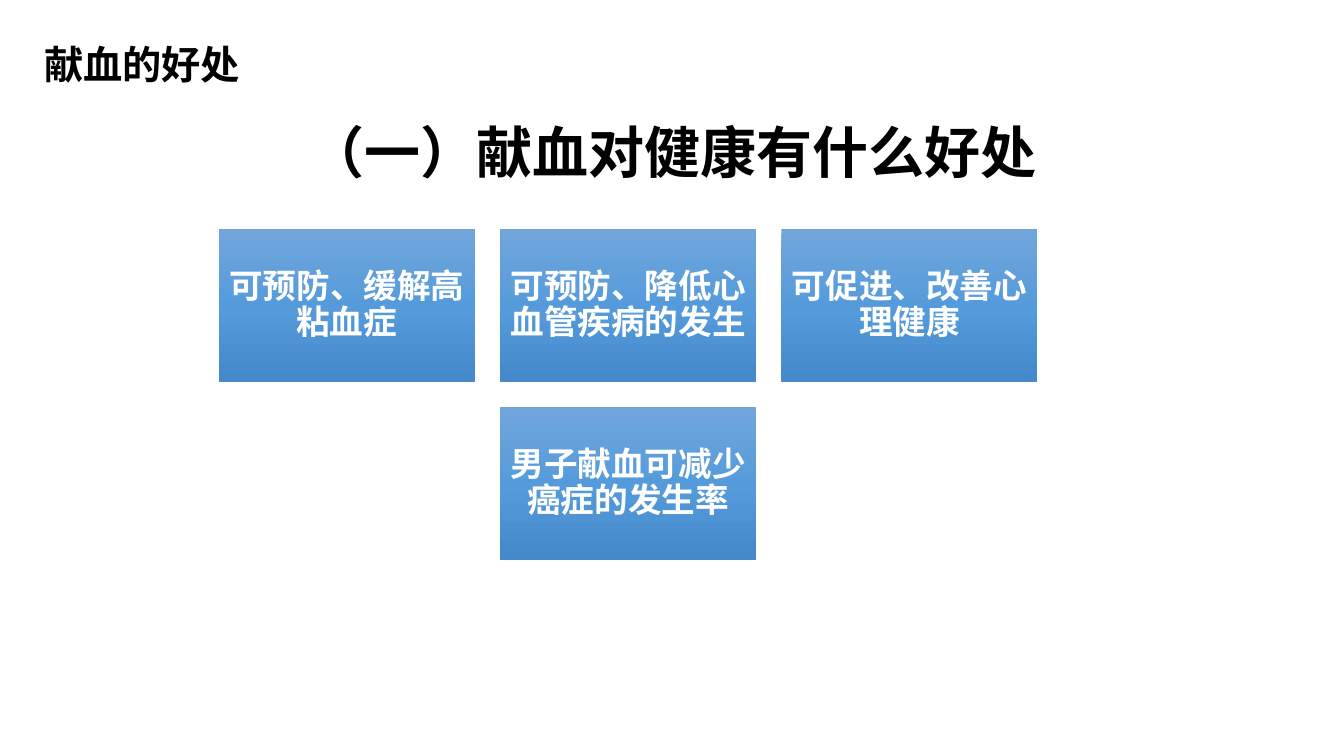
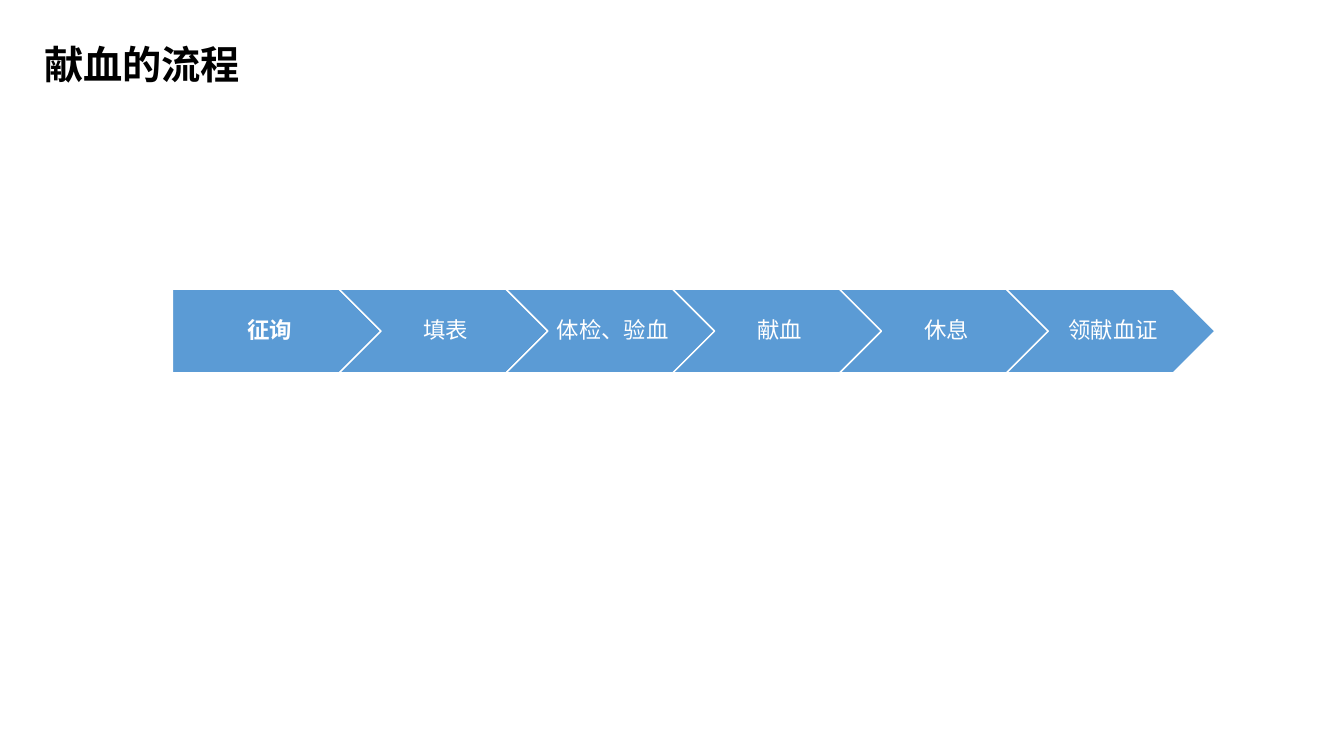
from lxml.etree import SubElement
from pptx import Presentation
from pptx.dml.color import RGBColor
from pptx.enum.shapes import MSO_SHAPE
from pptx.enum.text import MSO_ANCHOR, MSO_AUTO_SIZE, PP_ALIGN
from pptx.oxml.ns import qn
from pptx.util import Inches, Pt

COLOURS = {
    "ink": "000000",
    "white": "FFFFFF",
    "step": "5B9BD5",
    "card_top": "71A6DB",
    "card_middle": "559BDB",
    "card_bottom": "448ACA",
}
LATIN_FONT = "Roboto"
CJK_FONT = "Noto Sans CJK SC"
TITLE_ONLY = 5

TITLE_BOX = (0.34, 0.35, 5.18, 0.57)
HEADING_BOX = (1.98, 1.12, 9.38, 0.77)
CARDS_BOX = (2.17, 2.27, 8.12, 3.29)
STEPS_BOX = (1.71, 2.87, 10.34, 0.83)

HEADING_INSETS = (0.1, 0.05, 0.1, 0.05)
CARD_INSETS = (0.1, 0.1, 0.1, 0.1)
FIRST_STEP_INSETS = (0.09, 0.05, 0.02, 0.05)
STEP_INSETS = (0.07, 0.05, 0.02, 0.05)

TITLE_FONT = {"size": Pt(28), "bold": True, "name": LATIN_FONT}
HEADING_FONT = {"size": Pt(40), "bold": True, "name": CJK_FONT}
CARD_FONT = {"size": Pt(24), "bold": True, "name": LATIN_FONT}
STEP_FONT = {"size": Pt(16), "bold": False, "name": LATIN_FONT}

BENEFIT_ROWS = [
    ["可预防、缓解高粘血症", "可预防、降低心血管疾病的发生", "可促进、改善心理健康"],
    ["男子献血可减少癌症的发生率"],
]
STEPS = ["征询", "填表", "体检、验血", "献血", "休息", "领献血证"]


def colour(name):
    return RGBColor.from_string(COLOURS[name])


def inches(box):
    return [Inches(length) for length in box]


def set_text(shape, text, font, ink, align, insets, anchor=MSO_ANCHOR.TOP):
    frame = shape.text_frame
    frame.text = text
    left, top, right, bottom = inches(insets)
    frame_format = {
        "word_wrap": True,
        "auto_size": MSO_AUTO_SIZE.NONE,
        "vertical_anchor": anchor,
        "margin_left": left,
        "margin_top": top,
        "margin_right": right,
        "margin_bottom": bottom,
    }
    for key, value in frame_format.items():
        setattr(frame, key, value)
    paragraph = frame.paragraphs[0]
    paragraph.alignment = align
    run = paragraph.runs[0]
    for key, value in font.items():
        setattr(run.font, key, value)
    run.font.color.rgb = colour(ink)
    east_asian = SubElement(run.font._element, qn("a:ea"))
    east_asian.set("typeface", CJK_FONT)
    return paragraph


def add_block(slide, preset, box, text, font, insets):
    """Add a preset shape with centred, tightly spaced white text."""
    block = slide.shapes.add_shape(preset, *inches(box))
    block.shadow.inherit = False
    paragraph = set_text(block, text, font, "white", PP_ALIGN.CENTER, insets,
                         MSO_ANCHOR.MIDDLE)
    paragraph.line_spacing = 0.9
    paragraph.space_after = Pt(font["size"].pt * 0.35)
    return block


def fill_card(card):
    """Give a card its three-stop gradient from top to bottom."""
    card.line.fill.background()
    card.fill.gradient()
    card.fill.gradient_angle = 270
    stop_list = card._element.spPr.find(qn("a:gradFill")).find(qn("a:gsLst"))
    for stop in list(stop_list):
        stop_list.remove(stop)
    for percent, name in ((0, "card_top"), (50, "card_middle"), (100, "card_bottom")):
        stop = SubElement(stop_list, qn("a:gs"), pos=str(percent * 1000))
        SubElement(stop, qn("a:srgbClr"), val=COLOURS[name])


def add_titled_slide(deck, title):
    slide = deck.slides.add_slide(deck.slide_layouts[TITLE_ONLY])
    holder = slide.shapes.title
    holder.left, holder.top, holder.width, holder.height = inches(TITLE_BOX)
    set_text(holder, title, TITLE_FONT, "ink", PP_ALIGN.LEFT, HEADING_INSETS)
    return slide


def add_heading(slide, box, text):
    heading = slide.shapes.add_textbox(*inches(box))
    set_text(heading, text, HEADING_FONT, "ink", PP_ALIGN.CENTER, HEADING_INSETS)


def add_cards(slide, box, rows, gap=0.25):
    """Lay out rows of equal cards, each row centred in the box."""
    left, top, width, height = box
    columns = max(len(row) for row in rows)
    card_width = (width - gap * (columns - 1)) / columns
    card_height = (height - gap * (len(rows) - 1)) / len(rows)
    for row_index, row in enumerate(rows):
        row_width = len(row) * (card_width + gap) - gap
        row_left = left + (width - row_width) / 2
        card_top = top + row_index * (card_height + gap)
        for column, text in enumerate(row):
            card_left = row_left + column * (card_width + gap)
            fill_card(add_block(slide, MSO_SHAPE.RECTANGLE,
                                (card_left, card_top, card_width, card_height),
                                text, CARD_FONT, CARD_INSETS))


def add_steps(slide, box, steps, overlap=0.2):
    """Fill the box with a chain of arrows; the first is flat on its left."""
    left, top, width, height = box
    step_width = width / (1 + (len(steps) - 1) * (1 - overlap))
    pitch = step_width * (1 - overlap)
    for index, text in enumerate(steps):
        first = index == 0
        step = add_block(slide,
                         MSO_SHAPE.PENTAGON if first else MSO_SHAPE.CHEVRON,
                         (left + index * pitch, top, step_width, height),
                         text, {**STEP_FONT, "bold": first},
                         FIRST_STEP_INSETS if first else STEP_INSETS)
        step.fill.solid()
        step.fill.fore_color.rgb = colour("step")
        step.line.color.rgb = colour("white")
        step.line.width = Pt(1)


def main():
    deck = Presentation()
    deck.slide_width, deck.slide_height = Inches(13.33), Inches(7.5)

    benefits = add_titled_slide(deck, "献血的好处")
    add_heading(benefits, HEADING_BOX, "（一）献血对健康有什么好处")
    add_cards(benefits, CARDS_BOX, BENEFIT_ROWS)

    process = add_titled_slide(deck, "献血的流程")
    add_steps(process, STEPS_BOX, STEPS)

    deck.save("out.pptx")


if __name__ == "__main__":
    main()
